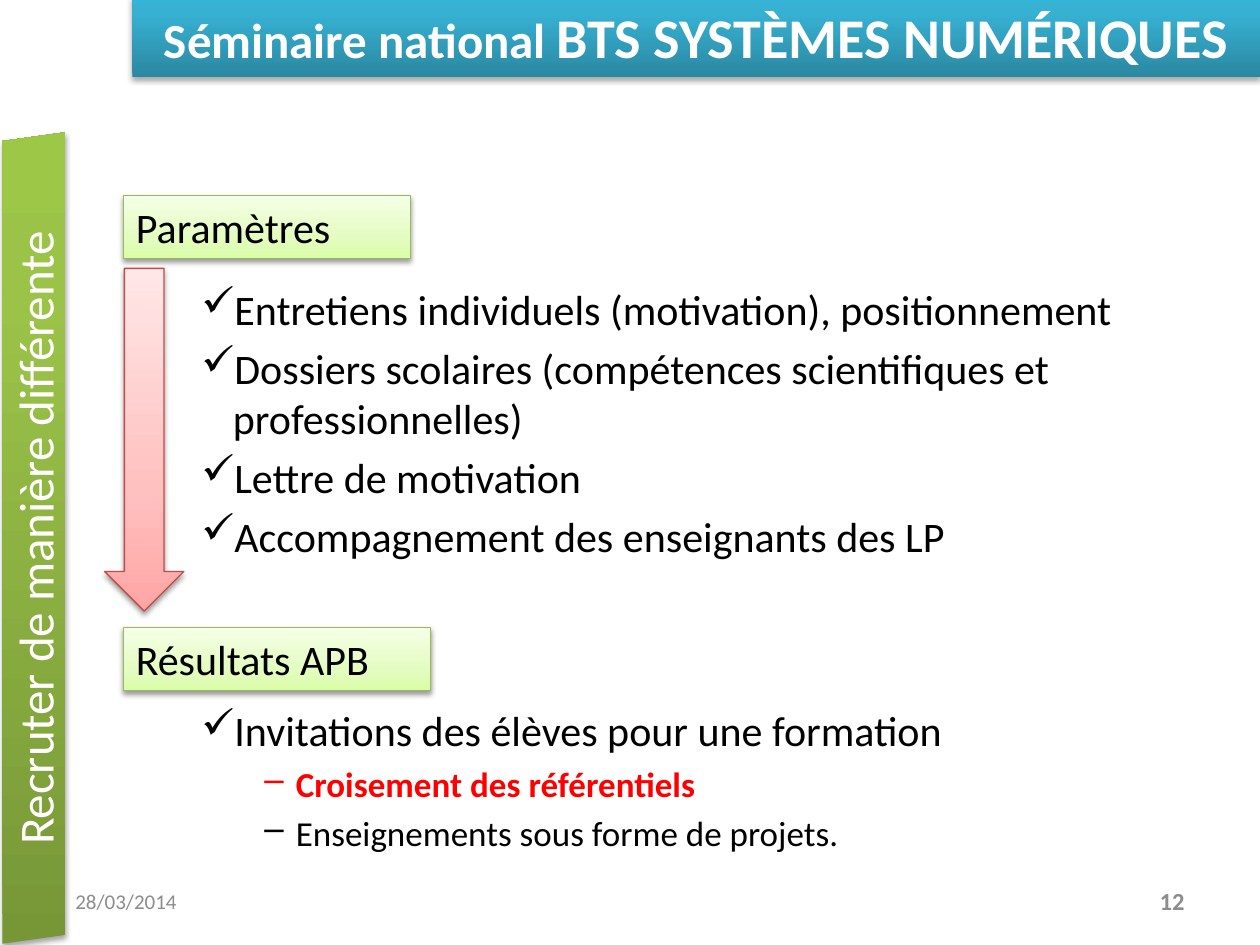
import pptx
import pptx.util
import pptx.dml.color
import pptx.enum.shapes
import pptx.enum.text
import pptx.oxml
import pptx.oxml.ns
from lxml import etree

Inches = pptx.util.Inches
Pt = pptx.util.Pt
qn = pptx.oxml.ns.qn
SHAPE = pptx.enum.shapes.MSO_SHAPE
ALIGN = pptx.enum.text.PP_ALIGN
ANCHOR = pptx.enum.text.MSO_ANCHOR
AUTOSIZE = pptx.enum.text.MSO_AUTO_SIZE

COLORS = {
    "white": "FFFFFF", "black": "000000", "red": "FF0000", "footer": "8C8C8C",
    "green_line": "98B955", "red_line": "BF4C48",
}
# Gradient stops, from bottom to top
GRADIENTS = {
    "blue": [(0, "2A88A2"), (80, "37B1D2"), (100, "34B4D6")],
    "green": [(0, "779737"), (80, "9BC348"), (100, "9DC746")],
    "pale_green": [(0, "DAFDA7"), (35, "E4FCC2"), (100, "F5FFE7")],
    "pale_red": [(0, "FFA6A5"), (35, "FFC0BF"), (100, "FFE7E7")],
}


class SlideBuilder:
    font_name = "Calibri"

    def __init__(self, slide):
        self.slide = slide

    def format_font(self, font, size, color="black", bold=False):
        font.name = self.font_name
        font.size = Pt(size)
        font.bold = bold
        font.color.rgb = pptx.dml.color.RGBColor.from_string(COLORS[color])

    def decorate(self, shape, gradient, line=None, shadow_alpha=38):
        """Vertical gradient, optional outline and soft shadow below."""
        shape.fill.gradient()
        shape.fill.gradient_angle = 90
        properties = shape._element.spPr
        stops = properties.find(qn("a:gradFill")).find(qn("a:gsLst"))
        for stop in list(stops):
            stops.remove(stop)
        for position, color in GRADIENTS[gradient]:
            stop = etree.SubElement(stops, qn("a:gs"), pos=str(position * 1000))
            etree.SubElement(stop, qn("a:srgbClr"), val=color)
        if line:
            shape.line.color.rgb = pptx.dml.color.RGBColor.from_string(COLORS[line])
            shape.line.width = Pt(0.75)
        else:
            shape.line.fill.background()
        shape.shadow.inherit = False
        shadow = etree.SubElement(
            properties.find(qn("a:effectLst")), qn("a:outerShdw"),
            blurRad=str(Pt(3.1)), dist=str(Pt(1.7)), dir="5400000", rotWithShape="0")
        color = etree.SubElement(shadow, qn("a:srgbClr"), val=COLORS["black"])
        etree.SubElement(color, qn("a:alpha"), val=str(shadow_alpha * 1000))

    def banner(self, parts, box):
        title = self.slide.shapes.title
        title.left, title.top, title.width, title.height = map(Inches, box)
        self.decorate(title, "blue", shadow_alpha=35)
        frame = title.text_frame
        frame.auto_size = AUTOSIZE.NONE
        paragraph = frame.paragraphs[0]
        paragraph.alignment = ALIGN.CENTER
        for text, size in parts:
            run = paragraph.add_run()
            run.text = text
            self.format_font(run.font, size, "white", True)

    def side_band(self, text, corners):
        points = [(Inches(x), Inches(y)) for x, y in corners]
        outline = self.slide.shapes.build_freeform(*points[0])
        outline.add_line_segments(points[1:])
        band = outline.convert_to_shape()
        self.decorate(band, "green", shadow_alpha=35)
        frame = band.text_frame
        frame.text = text
        frame.vertical_anchor = ANCHOR.MIDDLE
        frame._txBody.bodyPr.set("vert", "vert270")
        frame.paragraphs[0].alignment = ALIGN.CENTER
        self.format_font(frame.paragraphs[0].runs[0].font, 28, "white")

    def heading(self, text, box):
        heading = self.slide.shapes.add_shape(SHAPE.RECTANGLE, *map(Inches, box))
        self.decorate(heading, "pale_green", "green_line")
        frame = heading.text_frame
        frame.text = text
        frame.vertical_anchor = ANCHOR.TOP
        frame.paragraphs[0].alignment = ALIGN.LEFT
        self.format_font(frame.paragraphs[0].runs[0].font, 24)

    def arrow(self, box):
        arrow = self.slide.shapes.add_shape(SHAPE.DOWN_ARROW, *map(Inches, box))
        self.decorate(arrow, "pale_red", "red_line")

    def bullets(self, items, box):
        frame = self.slide.shapes.add_textbox(*map(Inches, box)).text_frame
        frame.word_wrap = True
        for index, (text, bullet, margin, size, color, bold, space) in enumerate(items):
            paragraph = frame.add_paragraph() if index else frame.paragraphs[0]
            paragraph.text = text
            properties = paragraph._p.get_or_add_pPr()
            properties.set("marL", str(Inches(margin)))
            properties.set("indent", str(Inches(-0.25)))
            etree.SubElement(properties, qn("a:buChar"), char=bullet)
            if index:
                paragraph.space_before = Pt(space)
            self.format_font(paragraph.runs[0].font, size, color, bold)

    def footer(self, text, left, size, alignment, bold=False):
        box = map(Inches, (left, 6.95, 2.33, 0.4))
        frame = self.slide.shapes.add_textbox(*box).text_frame
        frame.word_wrap = True
        frame.text = text
        frame.vertical_anchor = ANCHOR.MIDDLE
        frame.paragraphs[0].alignment = alignment
        self.format_font(frame.paragraphs[0].runs[0].font, size, "footer", bold)


def check(text, space=4.8):
    return text, "✓", 1.25, 24, "black", False, space


def dash(text, color="black", bold=False):
    return text, "–", 1.75, 20, color, bold, 4


def main():
    presentation = pptx.Presentation()
    presentation.slide_width = Inches(10)
    presentation.slide_height = Inches(7.5)
    builder = SlideBuilder(presentation.slides.add_slide(presentation.slide_layouts[5]))

    # Seminar banner
    builder.banner([("Séminaire national ", 28), ("BTS SYSTÈMES NUMÉRIQUES", 32)],
                   (1.05, -0.03, 8.95, 0.64))

    # Criteria and results; the wide gap leaves room for the second heading
    builder.bullets([
        check("Entretiens individuels (motivation), positionnement"),
        check("Dossiers scolaires (compétences scientifiques et professionnelles)"),
        check("Lettre de motivation"),
        check("Accompagnement des enseignants des LP"),
        check("Invitations des élèves pour une formation", space=82.5),
        dash("Croisement des référentiels", "red", True),
        dash("Enseignements sous forme de projets."),
    ], (0.5, 2.2, 9, 4.86))
    builder.arrow((0.83, 2.13, 0.63, 2.72))

    # Date and slide number
    builder.footer("28/03/2014", 0.5, 12, ALIGN.LEFT)
    builder.footer("12", 7.17, 14, ALIGN.RIGHT, True)

    # Slanted band on the left
    builder.side_band("Recruter de manière différente",
                      [(0.02, 1.12), (0.52, 1.05), (0.52, 7.42), (0.02, 7.49)])

    # Headings
    builder.heading("Paramètres", (0.98, 1.55, 2.28, 0.5))
    builder.heading("Résultats APB", (0.98, 4.98, 2.44, 0.5))

    presentation.save("out.pptx")


if __name__ == "__main__":
    main()
